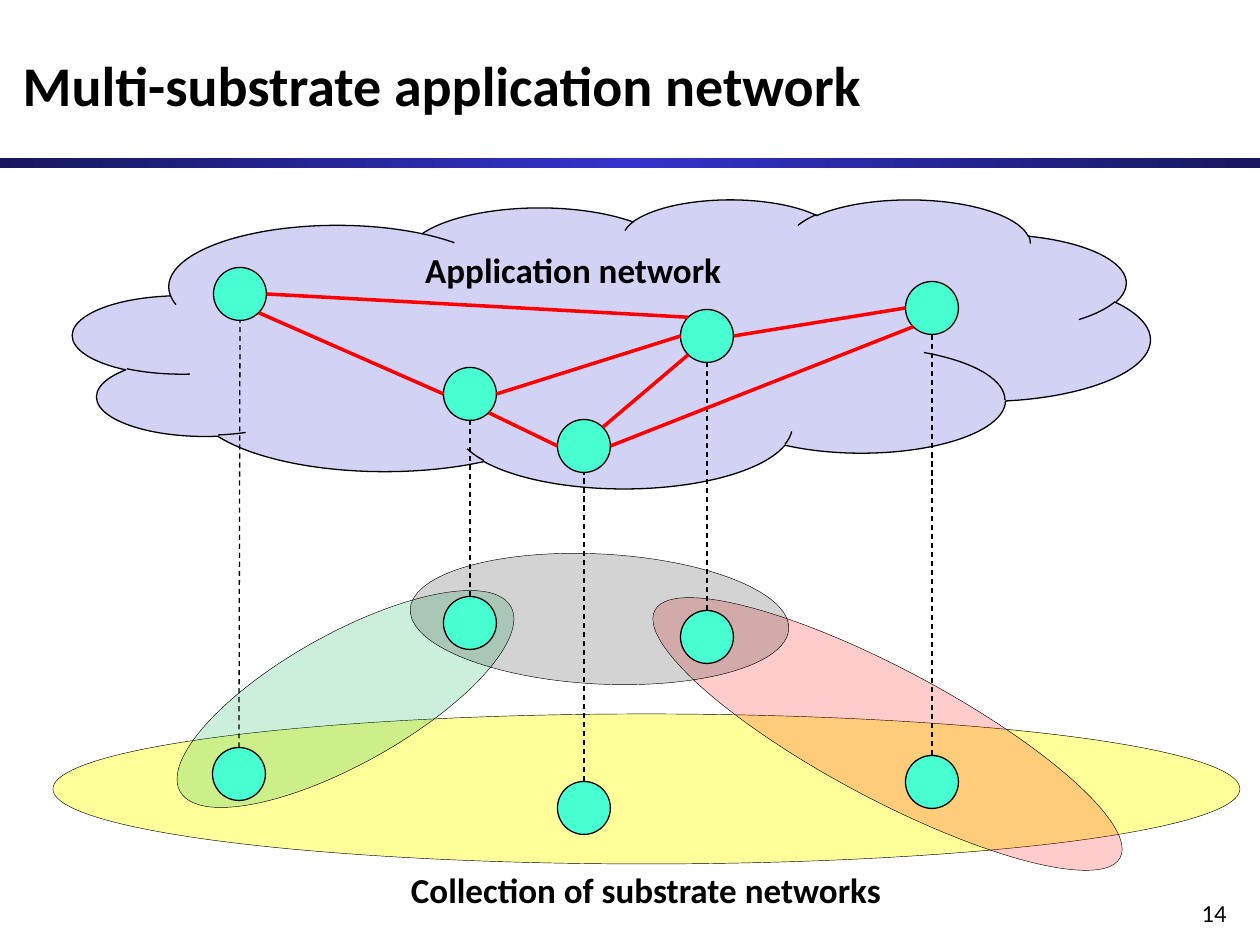
"""Build the slide on a multi-substrate application network."""
import math

from pptx import Presentation
from pptx import util as u
from pptx.dml.color import RGBColor
from pptx.enum import dml, shapes, text
from pptx.oxml import parse_xml
from pptx.oxml.ns import nsdecls
from lxml import etree

EMU_PER_PX = 914400 / 126
NODE_SIZE = 53
BLACK = RGBColor(0x00, 0x00, 0x00)
RED = RGBColor(0xFF, 0x00, 0x00)
GREEN = RGBColor(0x00, 0xB0, 0x50)
GRAY = RGBColor(0x26, 0x26, 0x26)
YELLOW = RGBColor(0xFF, 0xFF, 0x99)
AQUA = RGBColor(0x47, 0xFF, 0xD1)
LAVENDER = RGBColor(0xD2, 0xD2, 0xF4)
NAVY = RGBColor(0x17, 0x17, 0x5E)
BLUE = RGBColor(0x33, 0x33, 0xCC)

SUBSTRATES = [
    ((624, 669, 527, 130), 28, RED),
    ((156, 634, 379, 130), 330.8, GREEN),
    ((410, 554, 379, 130), 3, GRAY),
]
NODES = {
    "A": ((240, 294), (239, 774)),
    "B": ((470, 394), (470, 623)),
    "C": ((584, 446), (584, 808)),
    "D": ((707, 336), (707, 637)),
    "E": ((932, 308), (932, 782)),
}
LINKS = [
    ("A", 45, "B", 180), ("A", 0, "D", 225), ("B", 0, "D", 180),
    ("B", 45, "C", 180), ("C", 0, "E", 135), ("D", 0, "E", 180),
    ("C", 315, "D", 135),
]


def px(*lengths):
    """Turn pixel lengths into a list of EMU lengths."""
    return [u.Emu(round(length * EMU_PER_PX)) for length in lengths]


def write(frame, words, size, bold=True, align=text.PP_ALIGN.CENTER,
          anchor=text.MSO_ANCHOR.TOP):
    """Put one formatted paragraph into a text frame."""
    layout = {"word_wrap": True, "auto_size": text.MSO_AUTO_SIZE.NONE,
              "vertical_anchor": anchor}
    for name, value in layout.items():
        setattr(frame, name, value)
    para = frame.paragraphs[0]
    para.alignment = align
    span = para.add_run()
    span.text = words
    for name, value in {"name": "Calibri", "size": u.Pt(size), "bold": bold}.items():
        setattr(span.font, name, value)
    span.font.color.rgb = BLACK


def add_label(page, area, words, size, **style):
    """Add a text box."""
    box = page.shapes.add_textbox(*px(*area))
    write(box.text_frame, words, size, **style)


def add_outlined(page, kind, area, color, width, rotation=0, opacity=100):
    """Add a filled shape with a black outline."""
    shape = page.shapes.add_shape(kind, *px(*area))
    shape.shadow.inherit = False
    shape.rotation = rotation
    shape.fill.solid()
    shape.fill.fore_color.rgb = color
    shape.line.color.rgb = BLACK
    shape.line.width = u.Pt(width)
    if opacity < 100:
        tint = shape.fill._xPr.find(".//{*}solidFill/{*}srgbClr")
        etree.SubElement(tint, tint.tag.replace("srgbClr", "alpha"),
                         val=str(opacity * 1000))
    return shape


def add_node(page, center):
    """Add a network node around its centre."""
    left, top = (value - NODE_SIZE / 2 for value in center)
    add_outlined(page, shapes.MSO_SHAPE.OVAL, (left, top, NODE_SIZE, NODE_SIZE), AQUA, 0.75)


def rim(center, angle):
    """Find the point on a node's rim, clockwise from the right."""
    turn = math.radians(angle)
    return (center[0] + NODE_SIZE / 2 * math.cos(turn),
            center[1] + NODE_SIZE / 2 * math.sin(turn))


def add_line(page, start, end, color, width, dash=None):
    """Add a straight connector between two points."""
    line = page.shapes.add_connector(shapes.MSO_CONNECTOR.STRAIGHT, *px(*start, *end))
    line.line.color.rgb = color
    line.line.width = u.Pt(width)
    line.line.dash_style = dash
    line._element.spPr.append(parse_xml(f"<a:effectLst {nsdecls('a')}/>"))


def add_title_bar(page):
    """Add the gradient bar below the title."""
    bar = page.shapes.add_shape(shapes.MSO_SHAPE.RECTANGLE, *px(0, 158, 1260, 10))
    bar.shadow.inherit = False
    bar.line.fill.background()
    bar.fill.gradient()
    bar.fill.gradient_angle = 0
    stops = "".join(
        f'<a:gs pos="{place * 1000}"><a:srgbClr val="{color}"/></a:gs>'
        for place, color in ((0, NAVY), (50, BLUE), (100, NAVY)))
    old = bar._element.spPr.find(".//{*}gsLst")
    old.getparent().replace(old, parse_xml(f"<a:gsLst {nsdecls('a')}>{stops}</a:gsLst>"))


def add_title(page, words):
    """Place and fill the title placeholder."""
    title = page.shapes.title
    title.left, title.top, title.width, title.height = px(10, 21, 1239, 126)
    write(title.text_frame, words, 32, align=text.PP_ALIGN.LEFT,
          anchor=text.MSO_ANCHOR.MIDDLE)


def add_substrates(page):
    """Add the substrate networks with their nodes and caption."""
    oval = shapes.MSO_SHAPE.OVAL
    add_outlined(page, oval, (53, 714, 1187, 150), YELLOW, 0.25)
    for area, rotation, color in SUBSTRATES:
        add_outlined(page, oval, area, color, 0.25, rotation, opacity=20)
    for _, lower in NODES.values():
        add_node(page, lower)
    add_label(page, (346, 862, 600, 54), "Collection of substrate networks", 20)


def add_application(page):
    """Add the application network and its mapping to the substrates."""
    cloud = add_outlined(page, shapes.MSO_SHAPE.CLOUD, (73, 199, 1077, 289), LAVENDER, 0.75)
    write(cloud.text_frame, "Application network", 20)
    for upper, lower in NODES.values():
        add_node(page, upper)
        add_line(page, rim(lower, 270), rim(upper, 90), BLACK, 0.75, dml.MSO_LINE.DASH)
    for source, leaving, target, arriving in LINKS:
        add_line(page, rim(NODES[source][0], leaving), rim(NODES[target][0], arriving), RED, 2)


def main():
    """Build and save the deck."""
    deck = Presentation()
    deck.slide_width, deck.slide_height = px(1260, 945)
    page = deck.slides.add_slide(deck.slide_layouts[5])
    add_title_bar(page)
    add_title(page, "Multi-substrate application network")
    add_substrates(page)
    add_application(page)
    add_label(page, (977, 892, 262, 32), "14", 14, bold=False, align=text.PP_ALIGN.RIGHT)
    deck.save("out.pptx")


if __name__ == "__main__":
    main()
